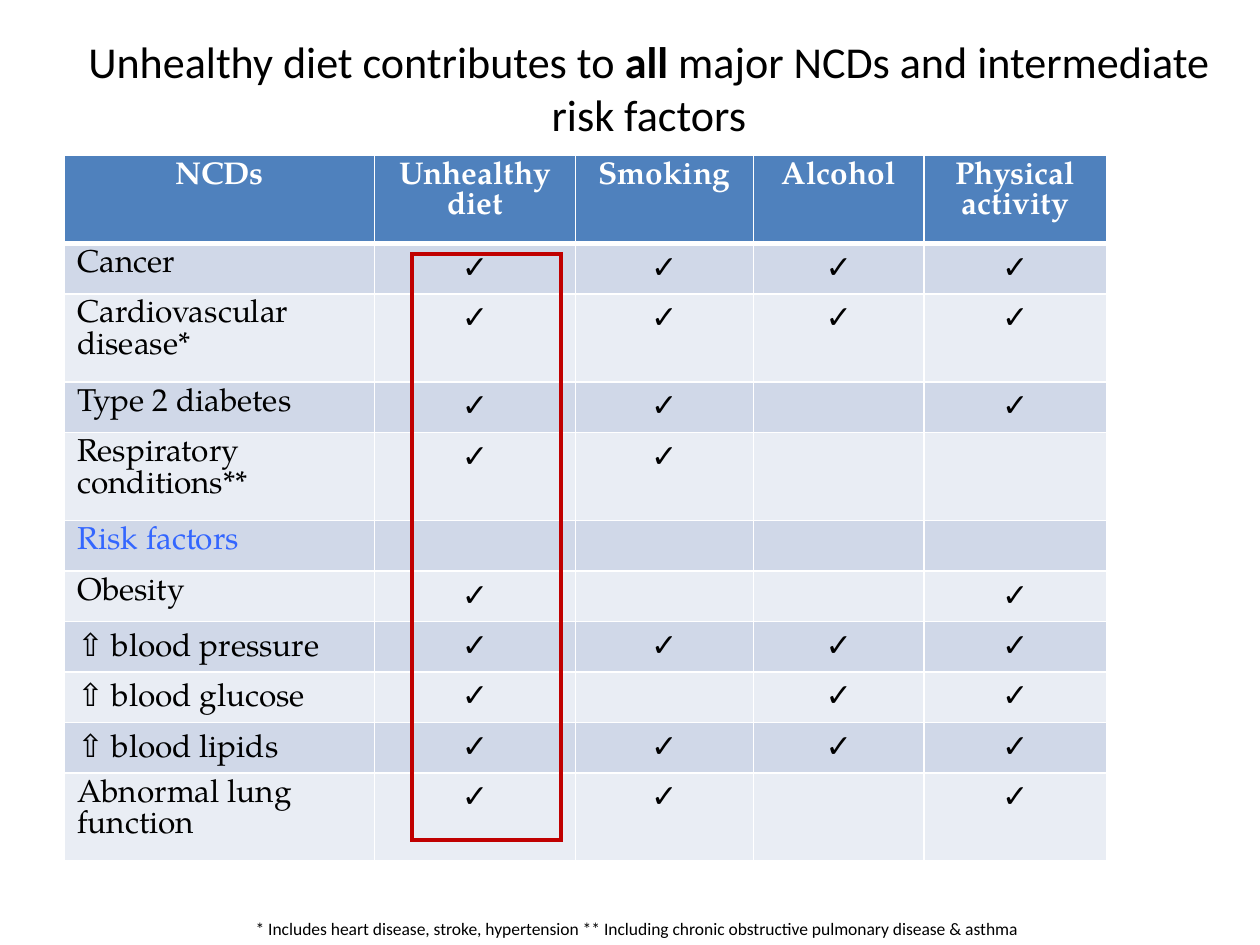
"""Build the slide on unhealthy diet, NCDs and intermediate risk factors."""
from lxml.etree import SubElement
from pptx import Presentation
from pptx.dml.color import RGBColor
from pptx.enum.shapes import MSO_SHAPE as Shape
from pptx.enum.text import MSO_ANCHOR as Anchor, PP_ALIGN as Align
from pptx.oxml.ns import qn
from pptx.util import Pt

BLACK = RGBColor(0x00, 0x00, 0x00)
WHITE = RGBColor(0xFF, 0xFF, 0xFF)
HEADER_BLUE = RGBColor(0x4F, 0x81, 0xBD)
BANDS = [RGBColor(0xD0, 0xD8, 0xE8), RGBColor(0xE9, 0xED, 0xF4)]
RISK_BLUE = RGBColor(0x33, 0x66, 0xFF)
RED = RGBColor(0xC0, 0x00, 0x00)
SERIF = "TeX Gyre Pagella"

HEADINGS = ["NCDs", "Unhealthy diet", "Smoking", "Alcohol", "Physical activity"]
ROWS = [
    ("Cancer", "✓✓✓✓"),
    ("Cardiovascular disease*", "✓✓✓✓"),
    ("Type 2 diabetes", "✓✓-✓"),
    ("Respiratory conditions**", "✓✓--"),
    ("Risk factors", "----"),
    ("Obesity", "✓--✓"),
    ("⇧ blood pressure", "✓✓✓✓"),
    ("⇧ blood glucose", "✓-✓✓"),
    ("⇧ blood lipids", "✓✓✓✓"),
    ("Abnormal lung function", "✓✓-✓"),
]
TALL_ROWS = (0, 2, 4, 10)
COLUMN_WIDTHS = [177.1, 114.7, 101.8, 97.5, 104.3]


def add_span(para, text, size, font_name, color, bold=False):
    span = para.add_run()
    span.text = text
    for name, value in {"size": Pt(size), "name": font_name, "bold": bold}.items():
        setattr(span.font, name, value)
    span.font.color.rgb = color


def add_border(cell, side, width):
    line = SubElement(cell._tc.get_or_add_tcPr(), qn(f"a:{side}"), w=str(Pt(width)))
    fill = SubElement(line, qn("a:solidFill"))
    SubElement(fill, qn("a:srgbClr"), val=str(WHITE))


deck = Presentation()
deck.slide_width, deck.slide_height = Pt(720), Pt(540)
page = deck.slides.add_slide(deck.slide_layouts[6])

title = page.shapes.add_textbox(Pt(36), Pt(17.3), Pt(669.6), Pt(65.5)).text_frame
title.word_wrap = True
title.vertical_anchor = Anchor.MIDDLE
para = title.paragraphs[0]
para.alignment = Align.CENTER
for text, bold in [
    ("Unhealthy diet contributes to ", False),
    ("all", True),
    (" major NCDs and intermediate risk factors", False),
]:
    add_span(para, text, 25.2, "Calibri", BLACK, bold)

table = page.shapes.add_table(
    len(ROWS) + 1, len(HEADINGS), Pt(37), Pt(88.6), Pt(sum(COLUMN_WIDTHS)), Pt(402.5)
).table
for column, width in zip(table.columns, COLUMN_WIDTHS):
    column.width = Pt(width)

for row_index, (label, marks) in enumerate([(HEADINGS[0], HEADINGS[1:])] + ROWS):
    is_header = row_index == 0
    table.rows[row_index].height = Pt(50.4 if row_index in TALL_ROWS else 28.7)
    for column_index, text in enumerate([label, *marks]):
        cell = table.cell(row_index, column_index)
        add_border(cell, "lnL", 1)
        add_border(cell, "lnR", 1)
        add_border(cell, "lnT", 3 if row_index == 1 else 1)
        add_border(cell, "lnB", 3 if is_header else 1)
        cell.fill.solid()
        cell.fill.fore_color.rgb = HEADER_BLUE if is_header else BANDS[(row_index - 1) % 2]
        para = cell.text_frame.paragraphs[0]
        para.alignment = Align.CENTER if is_header or column_index else Align.LEFT
        if is_header:
            add_span(para, text, 18, SERIF, WHITE, True)
        elif column_index:
            if text == "✓":
                add_span(para, text, 18, "Arial", BLACK)
        elif text.startswith("⇧"):
            add_span(para, text[0], 18, "Arial", BLACK)
            add_span(para, text[1:], 18, SERIF, BLACK)
        else:
            add_span(para, text, 18, SERIF, RISK_BLUE if text == "Risk factors" else BLACK)

footnote = page.shapes.add_textbox(Pt(139), Pt(520.9), Pt(547.2), Pt(19.1)).text_frame
footnote.word_wrap = True
add_span(
    footnote.paragraphs[0],
    "* Includes heart disease, stroke, hypertension "
    "** Including chronic obstructive pulmonary disease & asthma",
    10, "Calibri", BLACK,
)

diet_box = page.shapes.add_shape(Shape.RECTANGLE, Pt(235.4), Pt(145.4), Pt(85), Pt(334.8))
diet_box.shadow.inherit = False
diet_box.fill.background()
diet_box.line.color.rgb = RED
diet_box.line.width = Pt(2.25)
SubElement(diet_box.line._get_or_add_ln(), qn("a:miter"), lim="800000")

deck.save("out.pptx")
